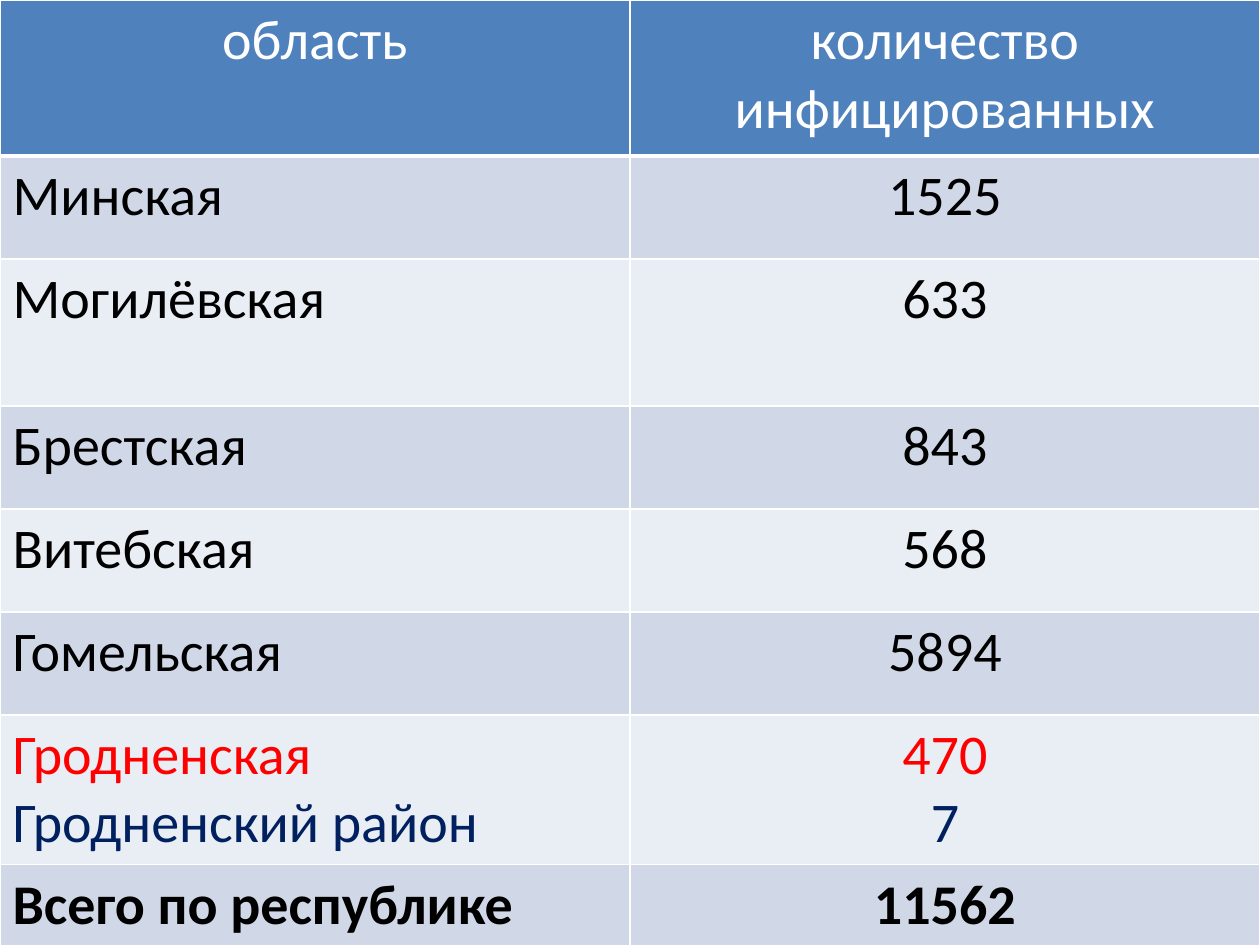
from pptx import Presentation
from pptx.dml.color import RGBColor
from pptx.enum.text import PP_ALIGN as Align
from pptx.oxml import parse_xml
from pptx.oxml.ns import nsdecls
from pptx.util import Emu, Pt

EMU_PER_PX = 914400 / 126
WIDTH, HEIGHT = 1260, 945
ROW_HEIGHTS = [156, 103, 147, 103, 103, 103, 147, 103]

WHITE = RGBColor(0xFF, 0xFF, 0xFF)
BLACK = RGBColor(0x00, 0x00, 0x00)
RED = RGBColor(0xFF, 0x00, 0x00)
NAVY = RGBColor(0x00, 0x20, 0x60)
HEADER_BLUE = RGBColor(0x4F, 0x81, 0xBD)
BANDS = [RGBColor(0xE9, 0xED, 0xF4), RGBColor(0xD0, 0xD8, 0xE8)]

HEADER = ["область", "количество инфицированных"]
REGIONS = [
    ["Минская", "1525"],
    ["Могилёвская", "633"],
    ["Брестская", "843"],
    ["Витебская", "568"],
    ["Гомельская", "5894"],
    ["Гродненская\nГродненский район", "470\n7"],
    ["Всего по республике", "11562"],
]


def px(length):
    return Emu(round(length * EMU_PER_PX))


def write_text(frame, text, colors=(BLACK,), align=Align.LEFT, bold=False):
    frame.text = text
    for paragraph, color in zip(frame.paragraphs, colors):
        paragraph.alignment = align
        font = paragraph.runs[0].font
        font.name, font.size, font.bold = "Calibri", Pt(32), bold
        font.color.rgb = color


def set_borders(cell, bottom=1):
    properties = cell._tc.get_or_add_tcPr()
    widths = {"lnL": 1, "lnR": 1, "lnT": 1, "lnB": bottom}
    for index, (side, width) in enumerate(widths.items()):
        properties.insert(index, parse_xml(
            f'<a:{side} {nsdecls("a")} w="{Pt(width)}"><a:solidFill>'
            f'<a:srgbClr val="{WHITE}"/></a:solidFill></a:{side}>'))


def fill_cell(cell, color, bottom=1):
    cell.fill.solid()
    cell.fill.fore_color.rgb = color
    set_borders(cell, bottom)


def add_region_table(slide):
    rows = [HEADER] + REGIONS
    table = slide.shapes.add_table(
        len(rows), len(HEADER), 0, 0, px(WIDTH), px(sum(ROW_HEIGHTS))).table
    for row, height in zip(table.rows, ROW_HEIGHTS):
        row.height = px(height)
    for row_index, texts in enumerate(rows):
        is_header = row_index == 0
        is_total = row_index == len(rows) - 1
        for column_index, text in enumerate(texts):
            cell = table.cell(row_index, column_index)
            centred = is_header or column_index == 1
            if is_header:
                colors = [WHITE]
            else:
                colors = [RED, NAVY] if "\n" in text else [BLACK]
            write_text(cell.text_frame, text, colors=colors, bold=is_total,
                       align=Align.CENTER if centred else Align.LEFT)
            fill_cell(cell, HEADER_BLUE if is_header else BANDS[row_index % 2],
                      bottom=3 if is_header else 1)


def main():
    """Build the slide with infection counts by region."""
    presentation = Presentation()
    presentation.slide_width, presentation.slide_height = px(WIDTH), px(HEIGHT)
    slide = presentation.slides.add_slide(presentation.slide_layouts[6])
    add_region_table(slide)
    presentation.save("out.pptx")


if __name__ == "__main__":
    main()
